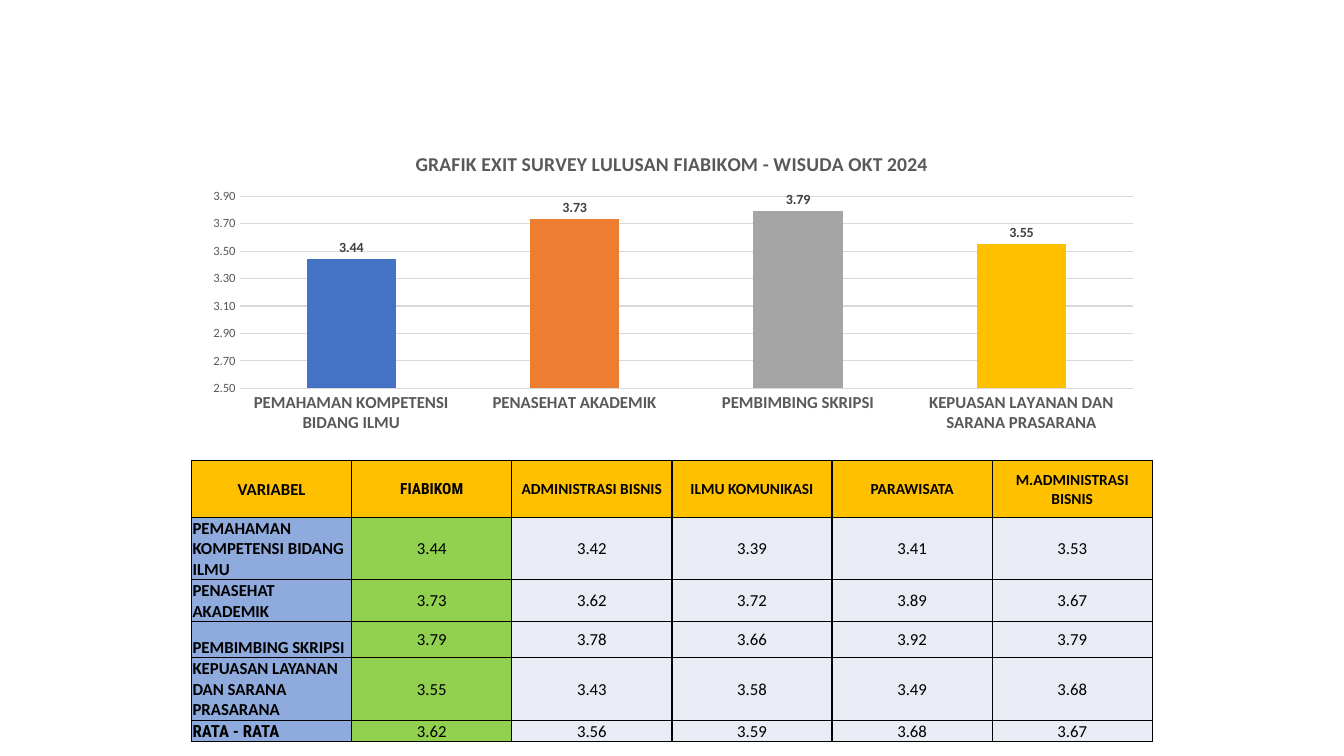
from dataclasses import dataclass

from lxml.etree import SubElement
from pptx import Presentation
from pptx.chart.data import CategoryChartData
from pptx.dml.color import RGBColor
from pptx.enum.chart import XL_CHART_TYPE, XL_LABEL_POSITION, XL_TICK_MARK
from pptx.enum.text import MSO_ANCHOR, PP_ALIGN
from pptx.oxml import parse_xml
from pptx.oxml.ns import nsdecls, qn
from pptx.util import Inches, Pt


@dataclass(frozen=True)
class Theme:
    font: str = "Calibri"
    condensed: str = "Roboto Condensed"
    black: str = "000000"
    grey: str = "595959"
    label: str = "404040"
    grid: str = "D9D9D9"
    header: str = "FFC000"
    variable: str = "8FAADC"
    faculty: str = "92D050"
    programme: str = "E9EBF5"
    bars: tuple[str, ...] = ("4472C4", "ED7D31", "A5A5A5", "FFC000")
    title_size: int = 14
    large: int = 12
    medium: int = 11
    small: int = 10
    tiny: int = 9


@dataclass(frozen=True)
class Variable:
    name: str
    scores: tuple[float, ...]
    height: float


@dataclass(frozen=True)
class CellStyle:
    fill: str
    size: int
    bold: bool = False
    font: str = Theme.font
    align: PP_ALIGN | None = PP_ALIGN.CENTER
    anchor: MSO_ANCHOR = MSO_ANCHOR.MIDDLE


THEME = Theme()
LEFT, WIDTH = 1.9, 9.53
HEADER_HEIGHT = 0.56
HEADINGS = ("VARIABEL", "FIABIKOM", "ADMINISTRASI BISNIS", "ILMU KOMUNIKASI",
            "PARAWISATA", "M.ADMINISTRASI BISNIS")
VARIABLES = (
    Variable("PEMAHAMAN KOMPETENSI BIDANG ILMU", (3.44, 3.42, 3.39, 3.41, 3.53), 0.53),
    Variable("PENASEHAT AKADEMIK", (3.73, 3.62, 3.72, 3.89, 3.67), 0.36),
    Variable("PEMBIMBING SKRIPSI", (3.79, 3.78, 3.66, 3.92, 3.79), 0.36),
    Variable("KEPUASAN LAYANAN DAN SARANA PRASARANA", (3.55, 3.43, 3.58, 3.49, 3.68), 0.53),
)
AVERAGE = Variable("RATA - RATA", (3.62, 3.56, 3.59, 3.68, 3.67), 0.18)


def style_font(font, size: int, color: str, bold: bool = False, name: str = THEME.font) -> None:
    font.name, font.size, font.bold = name, Pt(size), bold
    font.color.rgb = RGBColor.from_string(color)


def place_plot(chart, x: float, y: float, w: float, h: float) -> None:
    """Fix the inner plot area, in fractions of the chart."""
    plot_area = chart.element.find(".//" + qn("c:plotArea"))
    for old in plot_area.findall(qn("c:layout")):
        plot_area.remove(old)
    layout = parse_xml(f"<c:layout {nsdecls('c')}/>")
    manual = SubElement(layout, qn("c:manualLayout"))
    settings = {"layoutTarget": "inner", "xMode": "edge", "yMode": "edge",
                "x": x, "y": y, "w": w, "h": h}
    for tag, value in settings.items():
        SubElement(manual, qn(f"c:{tag}")).set("val", str(value))
    plot_area.insert(0, layout)


def add_survey_chart(slide) -> None:
    data = CategoryChartData(number_format="0.00")
    data.categories = [variable.name for variable in VARIABLES]
    data.add_series("Series 1", [variable.scores[0] for variable in VARIABLES])
    chart = slide.shapes.add_chart(
        XL_CHART_TYPE.COLUMN_CLUSTERED, Inches(LEFT), Inches(1.34),
        Inches(WIDTH), Inches(3.03), data).chart
    style_font(chart.font, THEME.small, THEME.black)
    chart.has_legend = False
    place_plot(chart, 0.05, 0.2, 0.93, 0.63)

    # Title
    chart.has_title = True
    title = chart.chart_title.text_frame.paragraphs[0]
    title.text = "GRAFIK EXIT SURVEY LULUSAN FIABIKOM - WISUDA OKT 2024"
    style_font(title.runs[0].font, THEME.title_size, THEME.grey, True)
    chart.chart_title.include_in_layout = False

    # Axes
    for axis in (chart.category_axis, chart.value_axis):
        axis.major_tick_mark = axis.minor_tick_mark = XL_TICK_MARK.NONE
        axis.format.line.fill.background()
    style_font(chart.category_axis.tick_labels.font, THEME.large, THEME.grey, True)
    scale = chart.value_axis
    scale.minimum_scale, scale.maximum_scale, scale.major_unit = 2.5, 3.9, 0.2
    scale.tick_labels.number_format = "0.00"
    scale.tick_labels.number_format_is_linked = False
    style_font(scale.tick_labels.font, THEME.tiny, THEME.grey)
    gridline = scale.major_gridlines.format.line
    gridline.width = Pt(0.75)
    gridline.color.rgb = RGBColor.from_string(THEME.grid)

    # Bars and their values
    plot = chart.plots[0]
    plot.gap_width, plot.vary_by_categories = 150, False
    series = plot.series[0]
    for index, color in enumerate(THEME.bars):
        bar_fill = series.points[index].format.fill
        bar_fill.solid()
        bar_fill.fore_color.rgb = RGBColor.from_string(color)
    values = series.data_labels
    values.show_value = True
    values.number_format, values.number_format_is_linked = "0.00", False
    values.position = XL_LABEL_POSITION.OUTSIDE_END
    style_font(values.font, THEME.small, THEME.label, True)


def fill_cell(cell, text: str, style: CellStyle) -> None:
    cell.margin_left = cell.margin_right = cell.margin_top = Inches(0.01)
    cell.margin_bottom = 0
    cell.vertical_anchor = style.anchor
    paragraph = cell.text_frame.paragraphs[0]
    paragraph.text = text
    paragraph.alignment = style.align
    style_font(paragraph.runs[0].font, style.size, THEME.black, style.bold, style.font)
    cell.fill.solid()
    cell.fill.fore_color.rgb = RGBColor.from_string(style.fill)
    # Borders come before the fill
    properties = cell._tc.get_or_add_tcPr()
    for position, side in enumerate(("lnL", "lnR", "lnT", "lnB")):
        properties.insert(position, parse_xml(
            f'<a:{side} {nsdecls("a")} w="{Pt(1)}"><a:solidFill>'
            f'<a:srgbClr val="{THEME.black}"/></a:solidFill></a:{side}>'))


def add_score_table(slide) -> None:
    rows = (*VARIABLES, AVERAGE)
    heights = [HEADER_HEIGHT, *(row.height for row in rows)]
    table = slide.shapes.add_table(
        len(heights), len(HEADINGS), Inches(LEFT), Inches(4.57),
        Inches(WIDTH), Inches(sum(heights))).table
    for table_row, height in zip(table.rows, heights):
        table_row.height = Inches(height)

    # Header row
    for column, heading in enumerate(HEADINGS):
        size = THEME.large if column == 0 else THEME.medium
        font = THEME.condensed if heading == "FIABIKOM" else THEME.font
        fill_cell(table.cell(0, column), heading, CellStyle(THEME.header, size, True, font))

    # Variable names and scores
    for index, row in enumerate(rows, start=1):
        font = THEME.condensed if row is AVERAGE else THEME.font
        fill_cell(table.cell(index, 0), row.name, CellStyle(
            THEME.variable, THEME.large, True, font, None, MSO_ANCHOR.BOTTOM))
        for column, score in enumerate(row.scores, start=1):
            fill = THEME.faculty if column == 1 else THEME.programme
            fill_cell(table.cell(index, column), f"{score:.2f}", CellStyle(fill, THEME.large))


def main() -> None:
    presentation = Presentation()
    presentation.slide_width, presentation.slide_height = Inches(13.33), Inches(7.5)
    slide = presentation.slides.add_slide(presentation.slide_layouts[6])
    add_survey_chart(slide)
    add_score_table(slide)
    presentation.save("out.pptx")


if __name__ == "__main__":
    main()
